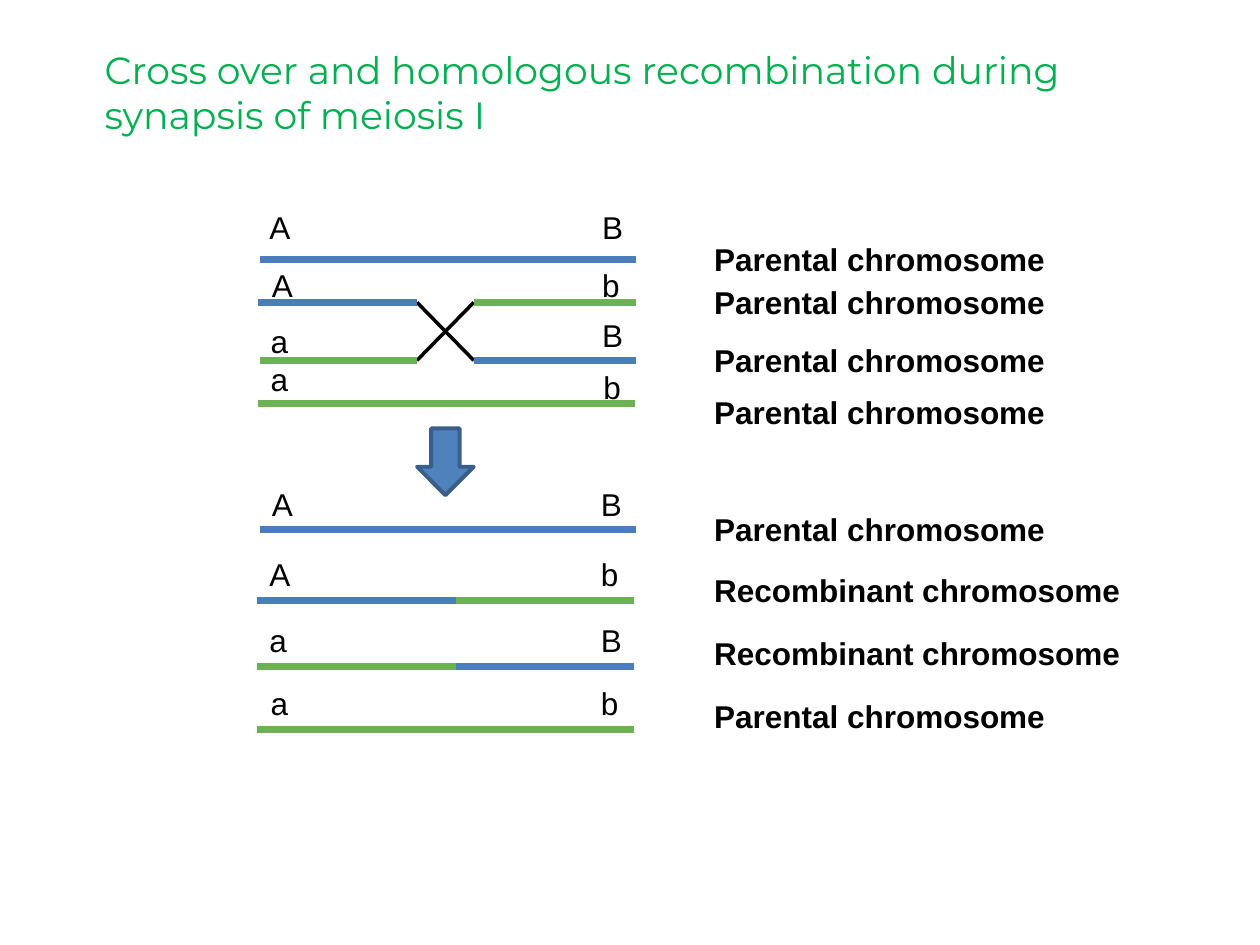
import pptx
import pptx.util
import pptx.dml.color
import pptx.enum.shapes
import pptx.enum.text
from lxml import etree

Inches = pptx.util.Inches
Pt = pptx.util.Pt
RGBColor = pptx.dml.color.RGBColor

BLACK = RGBColor(0x00, 0x00, 0x00)
BLUE = RGBColor(0x4A, 0x7D, 0xBA)
GREEN = RGBColor(0x6C, 0xB2, 0x55)
TITLE_GREEN = RGBColor(0x00, 0xB0, 0x50)
ARROW_FILL = RGBColor(0x4F, 0x81, 0xBD)
ARROW_LINE = RGBColor(0x39, 0x5E, 0x89)

# Content
TITLE = "Cross over and homologous recombination during synapsis of meiosis I"
PARENTAL = "Parental chromosome"
RECOMBINANT = "Recombinant chromosome"

# Chromosomes: y, then segments as (start x, end x, colour)
CHROMOSOMES = [
    (2.06, [(2.06, 5.05, BLUE)]),
    (2.40, [(2.05, 3.31, BLUE), (3.76, 5.05, GREEN)]),
    (2.86, [(2.06, 3.31, GREEN), (3.76, 5.05, BLUE)]),
    (3.20, [(2.05, 5.04, GREEN)]),
    (4.20, [(2.06, 5.05, BLUE)]),
    (4.77, [(2.04, 3.62, BLUE), (3.62, 5.03, GREEN)]),
    (5.29, [(2.04, 3.62, GREEN), (3.62, 5.03, BLUE)]),
    (5.79, [(2.04, 5.03, GREEN)]),
]
# Alleles: text, left, top, height ("aa" wraps to mark two chromatids)
ALLELES = [
    ("A", 2.04, 1.60, 0.4), ("B", 4.68, 1.60, 0.4),
    ("A", 2.06, 2.06, 0.4), ("b", 4.68, 2.06, 0.4),
    ("aa", 2.05, 2.51, 0.71), ("B", 4.68, 2.46, 0.4),
    ("b", 4.69, 2.87, 0.4),
    ("A", 2.06, 3.80, 0.4), ("B", 4.67, 3.80, 0.4),
    ("A", 2.04, 4.36, 0.4), ("b", 4.67, 4.36, 0.4),
    ("a", 2.04, 4.88, 0.4), ("B", 4.67, 4.88, 0.4),
    ("a", 2.05, 5.38, 0.4), ("b", 4.67, 5.38, 0.4),
]
# Row labels: text, top, width
LABELS = [
    (PARENTAL, 1.86, 3.4), (PARENTAL, 2.20, 3.4),
    (PARENTAL, 2.66, 3.4), (PARENTAL, 3.07, 3.4),
    (PARENTAL, 4.00, 3.4), (RECOMBINANT, 4.48, 4.17),
    (RECOMBINANT, 4.98, 4.17), (PARENTAL, 5.48, 3.4),
]
LABEL_LEFT = 5.57
CROSS_LEFT, CROSS_RIGHT = 3.31, 3.76
CROSS_TOP, CROSS_BOTTOM = 2.40, 2.86


def add_run(paragraph, text, size, font, color, bold=False):
    run = paragraph.add_run()
    run.text = text
    run.font.size = Pt(size)
    run.font.name = font
    run.font.bold = bold
    run.font.color.rgb = color


def add_text(shapes, text, left, top, width, height, bold=False):
    box = shapes.add_textbox(Inches(left), Inches(top), Inches(width), Inches(height))
    box.text_frame.word_wrap = True
    add_run(box.text_frame.paragraphs[0], text, 18, "Arial", BLACK, bold)


def add_line(shapes, start, end, color, width):
    line = shapes.add_connector(
        pptx.enum.shapes.MSO_CONNECTOR.STRAIGHT,
        Inches(start[0]), Inches(start[1]), Inches(end[0]), Inches(end[1]))
    line.line.color.rgb = color
    line.line.width = Pt(width)
    etree.SubElement(line._element.spPr, pptx.oxml.ns.qn("a:effectLst"))


presentation = pptx.Presentation()
presentation.slide_width = Inches(10)
presentation.slide_height = Inches(7.5)
slide = presentation.slides.add_slide(presentation.slide_layouts[5])

# Title
title = slide.shapes.title
title.left, title.top = Inches(0.73), Inches(0.32)
title.width, title.height = Inches(8.62), Inches(0.82)
frame = title.text_frame
frame.word_wrap = True
frame.auto_size = pptx.enum.text.MSO_AUTO_SIZE.NONE
frame.vertical_anchor = pptx.enum.text.MSO_ANCHOR.BOTTOM
frame.paragraphs[0].alignment = pptx.enum.text.PP_ALIGN.LEFT
add_run(frame.paragraphs[0], TITLE, 21.6, "Montserrat", TITLE_GREEN)

# Diagram: crossing strands, chromosomes, alleles and arrow in one group
diagram = slide.shapes.add_group_shape().shapes
for start_y, end_y in [(CROSS_TOP, CROSS_BOTTOM), (CROSS_BOTTOM, CROSS_TOP)]:
    add_line(diagram, (CROSS_LEFT, start_y), (CROSS_RIGHT, end_y), BLACK, 2)
for y, segments in CHROMOSOMES:
    for start_x, end_x, color in segments:
        add_line(diagram, (start_x, y), (end_x, y), color, 4)
for text, left, top, height in ALLELES:
    add_text(diagram, text, left, top, 0.36, height)

arrow = diagram.add_shape(
    pptx.enum.shapes.MSO_SHAPE.DOWN_ARROW,
    Inches(CROSS_LEFT), Inches(3.4), Inches(CROSS_RIGHT - CROSS_LEFT), Inches(0.53))
arrow.shadow.inherit = False
arrow.fill.solid()
arrow.fill.fore_color.rgb = ARROW_FILL
arrow.line.color.rgb = ARROW_LINE
arrow.line.width = Pt(2.25)

# Row labels
for text, top, width in LABELS:
    add_text(slide.shapes, text, LABEL_LEFT, top, width, 0.4, bold=True)

presentation.save("out.pptx")
